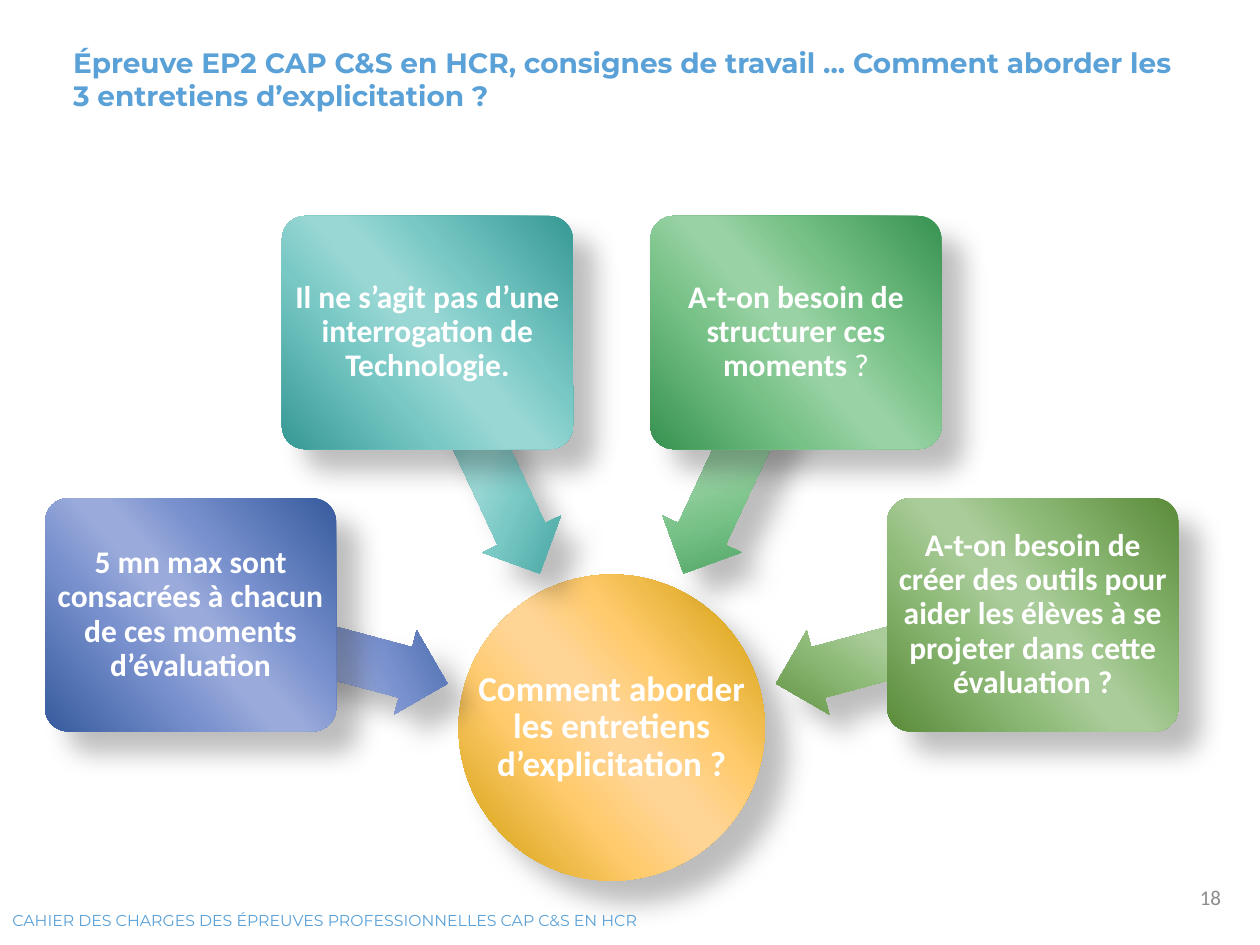
import math

import pptx
import pptx.dml.color
import pptx.enum.shapes
import pptx.enum.text
import pptx.oxml
import pptx.oxml.ns
import pptx.util

Inches = pptx.util.Inches
Color = pptx.dml.color.RGBColor
Shape = pptx.enum.shapes.MSO_SHAPE
Align = pptx.enum.text.PP_ALIGN
Anchor = pptx.enum.text.MSO_ANCHOR

SKY = Color(0x5A, 0xA1, 0xD8)
GREY = Color(0x8C, 0x8C, 0x8C)
WHITE = Color(0xFF, 0xFF, 0xFF)
GOLD = (Color(0xCC, 0x9A, 0x00), Color(0xFF, 0xCA, 0x6B), Color(0xFF, 0xD5, 0x95))
BLUE = (Color(0x36, 0x5B, 0x9D), Color(0x78, 0x90, 0xCD), Color(0x99, 0xAA, 0xDB))
TEAL = (Color(0x36, 0x98, 0x94), Color(0x78, 0xC8, 0xC5), Color(0x99, 0xD7, 0xD4))
GREEN = (Color(0x37, 0x92, 0x50), Color(0x78, 0xC2, 0x88), Color(0x99, 0xD2, 0xA4))
OLIVE = (Color(0x5A, 0x8B, 0x39), Color(0x8F, 0xBB, 0x79), Color(0xAA, 0xCC, 0x9A))

IDEAS = [
    (BLUE, [("5 mn max sont consacrées à chacun de ces moments d’évaluation", True)]),
    (TEAL, [("Il ne s’agit pas d’une interrogation de Technologie.", True)]),
    (GREEN, [("A-t-on besoin de structurer ces moments ", True), ("?", False)]),
    (OLIVE, [("A-t-on besoin de créer des outils pour aider les élèves "
              "à se projeter dans cette évaluation ?", True)]),
]


def write_text(shape, spans, size, font="Calibri", color=WHITE, align=Align.CENTER,
               anchor=Anchor.MIDDLE, spacing=0.9, margins=(0.1, 0.05)):
    """Write (text, bold) spans as the single paragraph of a shape."""
    frame = shape.text_frame
    frame.word_wrap = True
    frame.auto_size = pptx.enum.text.MSO_AUTO_SIZE.NONE
    frame.vertical_anchor = anchor
    frame.margin_left = frame.margin_right = Inches(margins[0])
    frame.margin_top = frame.margin_bottom = Inches(margins[1])
    para = frame.paragraphs[0]
    para.alignment = align
    para.line_spacing = spacing
    for text, bold in spans:
        span = para.add_run()
        span.text = text
        span.font.name = font
        span.font.size = pptx.util.Pt(size)
        span.font.bold = bold
        span.font.color.rgb = color


def add_glossy(page, kind, center, size, colors):
    """Add a shape around a center with a glossy gradient and a soft shadow."""
    left, top = (middle - length / 2 for middle, length in zip(center, size))
    shape = page.shapes.add_shape(kind, Inches(left), Inches(top), *map(Inches, size))
    shape.line.fill.background()
    dark, middle, light = colors
    stops = [(0, dark), (33, middle), (47, light), (53, light), (68, middle), (100, dark)]
    stop_xml = "".join(f'<a:gs pos="{place * 1000}"><a:srgbClr val="{color}"/></a:gs>'
                       for place, color in stops)
    names = pptx.oxml.ns.nsdecls("a")
    line = shape.line._ln
    line.addprevious(pptx.oxml.parse_xml(
        f'<a:gradFill {names} rotWithShape="1"><a:gsLst>{stop_xml}</a:gsLst>'
        f'<a:lin ang="{139 * 60000}" scaled="0"/></a:gradFill>'))
    line.addnext(pptx.oxml.parse_xml(
        f'<a:effectLst {names}><a:outerShdw blurRad="{pptx.util.Pt(15)}" '
        f'dist="{pptx.util.Pt(18)}" dir="{45 * 60000}" rotWithShape="0">'
        '<a:srgbClr val="000000"><a:alpha val="26000"/></a:srgbClr>'
        '</a:outerShdw></a:effectLst>'))
    return shape


def add_label(page, box, text, **style):
    """Add a one-paragraph text box in the given box."""
    label = page.shapes.add_textbox(*map(Inches, box))
    write_text(label, [(text, False)], **style)


def place_title(page, box, text):
    """Move, format and fill the title placeholder."""
    title = page.shapes.title
    title.left, title.top, title.width, title.height = map(Inches, box)
    write_text(title, [(text, True)], size=16, font="Montserrat", color=SKY,
               align=Align.LEFT, anchor=Anchor.TOP, spacing=1)


def draw_radial(page, box):
    """Draw the central question and the ideas pointing at it, within a box."""
    left, top, width, height = box
    diameter = 2.43
    hub = (left + width / 2, top + height - diameter / 2)

    def around(angle, radius):
        turn = math.radians(angle)
        return hub[0] + radius * math.cos(turn), hub[1] + radius * math.sin(turn)

    add_glossy(page, Shape.OVAL, hub, (diameter, diameter), GOLD)
    question = page.shapes.add_textbox(
        Inches(hub[0] - diameter / 2), Inches(hub[1] - diameter / 2),
        Inches(diameter), Inches(diameter))
    write_text(question, [("Comment aborder les entretiens d’explicitation ?", True)],
               size=20, margins=(0.01, 0.01))

    for index, (colors, spans) in enumerate(IDEAS):
        angle = 195 + 50 * index
        arrow = add_glossy(page, Shape.LEFT_ARROW, around(angle, 2.41), (2.12, 0.69), colors)
        arrow.adjustments[0] = 0.6
        arrow.rotation = angle
        card = add_glossy(page, Shape.ROUNDED_RECTANGLE, around(angle, 3.46),
                          (2.31, 1.85), colors)
        card.adjustments[0] = 0.1
        write_text(card, spans, size=18, margins=(0, 0))


def main():
    """Build the deck and save it."""
    deck = pptx.Presentation()
    deck.slide_width, deck.slide_height = Inches(10), Inches(7.5)
    page = deck.slides.add_slide(deck.slide_layouts[5])
    add_label(page, (7.54, 6.92, 2.25, 0.4), "18", size=12, color=GREY,
              align=Align.RIGHT, spacing=1)
    place_title(page, (0.48, 0.31, 9.02, 0.64),
                "Épreuve EP2 CAP C&S en HCR, consignes de travail ... "
                "Comment aborder les 3 entretiens d’explicitation ?")
    draw_radial(page, (0.36, 1.72, 8.99, 5.27))
    add_label(page, (0, 7.1, 6.17, 0.4),
              "CAHIER DES CHARGES DES ÉPREUVES PROFESSIONNELLES CAP C&S EN HCR",
              size=9, font="Montserrat", color=SKY, align=Align.LEFT, spacing=1)
    deck.save("out.pptx")


if __name__ == "__main__":
    main()
